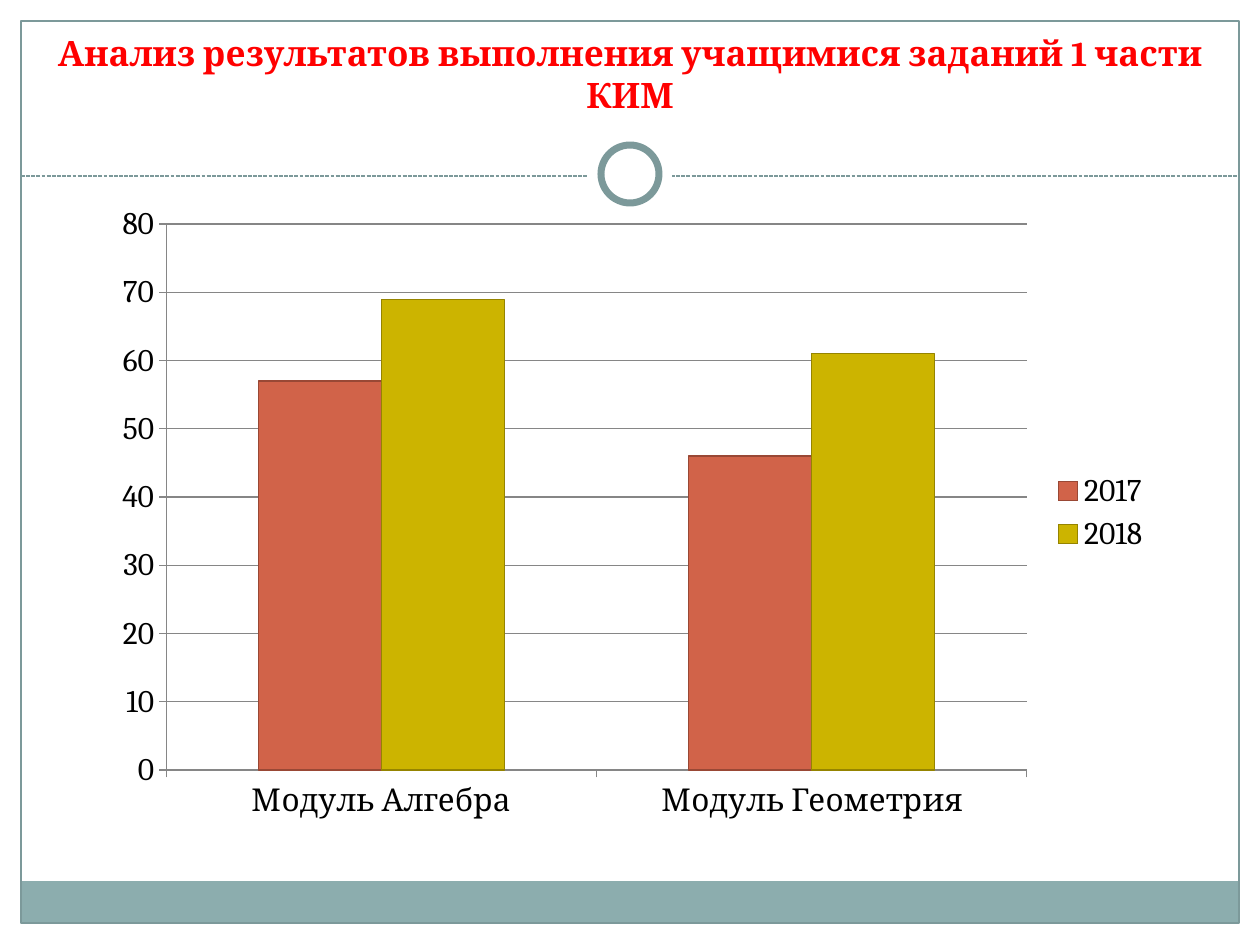
from lxml import etree
from pptx import Presentation
from pptx.chart.data import CategoryChartData
from pptx.dml.color import RGBColor
from pptx.enum.chart import XL_CHART_TYPE, XL_LEGEND_POSITION, XL_TICK_MARK
from pptx.enum.dml import MSO_LINE
from pptx.enum.shapes import MSO_CONNECTOR, MSO_SHAPE
from pptx.enum.text import MSO_ANCHOR, MSO_AUTO_SIZE, PP_ALIGN
from pptx.oxml.ns import qn
from pptx.util import Emu, Pt

EMU_PER_PX = 914400 / 126
SLIDE_W, SLIDE_H = 1260, 945
TITLE_ONLY = 5

RECT, OVAL = MSO_SHAPE.RECTANGLE, MSO_SHAPE.OVAL
STRAIGHT = MSO_CONNECTOR.STRAIGHT
DASH = MSO_LINE.SQUARE_DOT
COLUMNS = XL_CHART_TYPE.COLUMN_CLUSTERED
LEGEND_RIGHT = XL_LEGEND_POSITION.RIGHT
TICK_OUT = XL_TICK_MARK.OUTSIDE
BOTTOM, CENTER = MSO_ANCHOR.BOTTOM, PP_ALIGN.CENTER
NO_AUTOFIT = MSO_AUTO_SIZE.NONE

WHITE = RGBColor(0xFF, 0xFF, 0xFF)
BLACK = RGBColor(0x00, 0x00, 0x00)
RED = RGBColor(0xFF, 0x00, 0x00)
TEAL = RGBColor(0x7C, 0x99, 0x9A)
BAND_TEAL = RGBColor(0x8C, 0xAD, 0xAE)
GRID_GRAY = RGBColor(0x86, 0x86, 0x86)
RUST = RGBColor(0xD1, 0x63, 0x49)
RUST_EDGE = RGBColor(0x99, 0x48, 0x35)
OLIVE = RGBColor(0xCC, 0xB4, 0x00)
OLIVE_EDGE = RGBColor(0x95, 0x84, 0x00)


def px(length):
    return Emu(round(length * EMU_PER_PX))


def apply(target, values):
    for name, value in values.items():
        setattr(target, name, value)


class SlideBuilder:
    """Holds the style and the slide being built."""

    font_name = "Cambria"
    thin = Pt(0.75)

    def __init__(self, slide):
        self.slide = slide

    def set_font(self, font, size, color, bold=False):
        apply(font, {"name": self.font_name, "size": Pt(size), "bold": bold})
        font.color.rgb = color

    def set_line(self, line, color, width=None):
        line.color.rgb = color
        line.width = width or self.thin

    def title(self, text, left, top, width, height, bottom_inset):
        heading = self.slide.shapes.title
        apply(heading, {"left": px(left), "top": px(top),
                        "width": px(width), "height": px(height)})
        frame = heading.text_frame
        frame.text = text
        apply(frame, {"word_wrap": True, "auto_size": NO_AUTOFIT,
                      "vertical_anchor": BOTTOM,
                      "margin_bottom": px(bottom_inset)})
        paragraph = frame.paragraphs[0]
        apply(paragraph, {"alignment": CENTER, "line_spacing": 1.0})
        self.set_font(paragraph.runs[0].font, 20, RED, bold=True)

    def shape(self, kind, left, top, width, height,
              fill=None, line=None, line_width=None):
        figure = self.slide.shapes.add_shape(
            kind, px(left), px(top), px(width), px(height))
        figure.shadow.inherit = False
        if fill is None:
            figure.fill.background()
        else:
            figure.fill.solid()
            figure.fill.fore_color.rgb = fill
        if line is None:
            figure.line.fill.background()
        else:
            self.set_line(figure.line, line, line_width)

    def dashed_rule(self, left, right, y):
        rule = self.slide.shapes.add_connector(
            STRAIGHT, px(left), px(y), px(right), px(y))
        self.set_line(rule.line, TEAL)
        rule.line.dash_style = DASH
        etree.SubElement(rule._element.spPr, qn("a:effectLst"))

    def column_chart(self, modules, years, left, top, width, height):
        data = CategoryChartData()
        data.categories = modules
        for year, results, _, _ in years:
            data.add_series(year, results)
        chart = self.slide.shapes.add_chart(
            COLUMNS, px(left), px(top), px(width), px(height), data).chart
        apply(chart, {"has_title": False, "has_legend": True})
        self.set_font(chart.font, 18, BLACK)
        apply(chart.legend, {"position": LEGEND_RIGHT,
                             "include_in_layout": False})

        # Columns
        plot = chart.plots[0]
        apply(plot, {"gap_width": 150, "overlap": 0,
                     "vary_by_categories": False})
        for series, (_, _, color, edge) in zip(plot.series, years):
            series.format.fill.solid()
            series.format.fill.fore_color.rgb = color
            self.set_line(series.format.line, edge)

        # Axes and grid
        scale = chart.value_axis
        apply(scale, {"minimum_scale": 0, "maximum_scale": 80,
                      "major_unit": 10, "has_major_gridlines": True})
        for axis in (chart.category_axis, scale):
            axis.major_tick_mark = TICK_OUT
            self.set_line(axis.format.line, GRID_GRAY)
        self.set_line(scale.major_gridlines.format.line, GRID_GRAY)


def main():
    presentation = Presentation()
    apply(presentation, {"slide_width": px(SLIDE_W),
                         "slide_height": px(SLIDE_H)})
    layout = presentation.slide_layouts[TITLE_ONLY]
    builder = SlideBuilder(presentation.slides.add_slide(layout))

    # Frame with bottom band
    margin = 21
    inner_w = SLIDE_W - 2 * margin
    builder.shape(RECT, margin, 881, inner_w, 43, fill=BAND_TEAL)
    builder.shape(RECT, margin, margin, inner_w, 902, line=TEAL)

    # Divider with ring in the middle
    builder.dashed_rule(margin, SLIDE_W - margin, 176)
    ring_y = 174
    for diameter, edge in ((84, None), (58, TEAL)):
        builder.shape(OVAL, (SLIDE_W - diameter) // 2, ring_y - diameter // 2,
                      diameter, diameter, WHITE, edge, Pt(4))

    # Title
    builder.title("Анализ результатов выполнения учащимися заданий 1 части КИМ",
                  42, 32, 1176, 132, bottom_inset=48)

    # Results by module and year
    builder.column_chart(
        ("Модуль Алгебра", "Модуль Геометрия"),
        (("2017", (57, 46), RUST, RUST_EDGE),
         ("2018", (69, 61), OLIVE, OLIVE_EDGE)),
        101, 193, 1062, 639)

    presentation.save("out.pptx")


if __name__ == "__main__":
    main()
